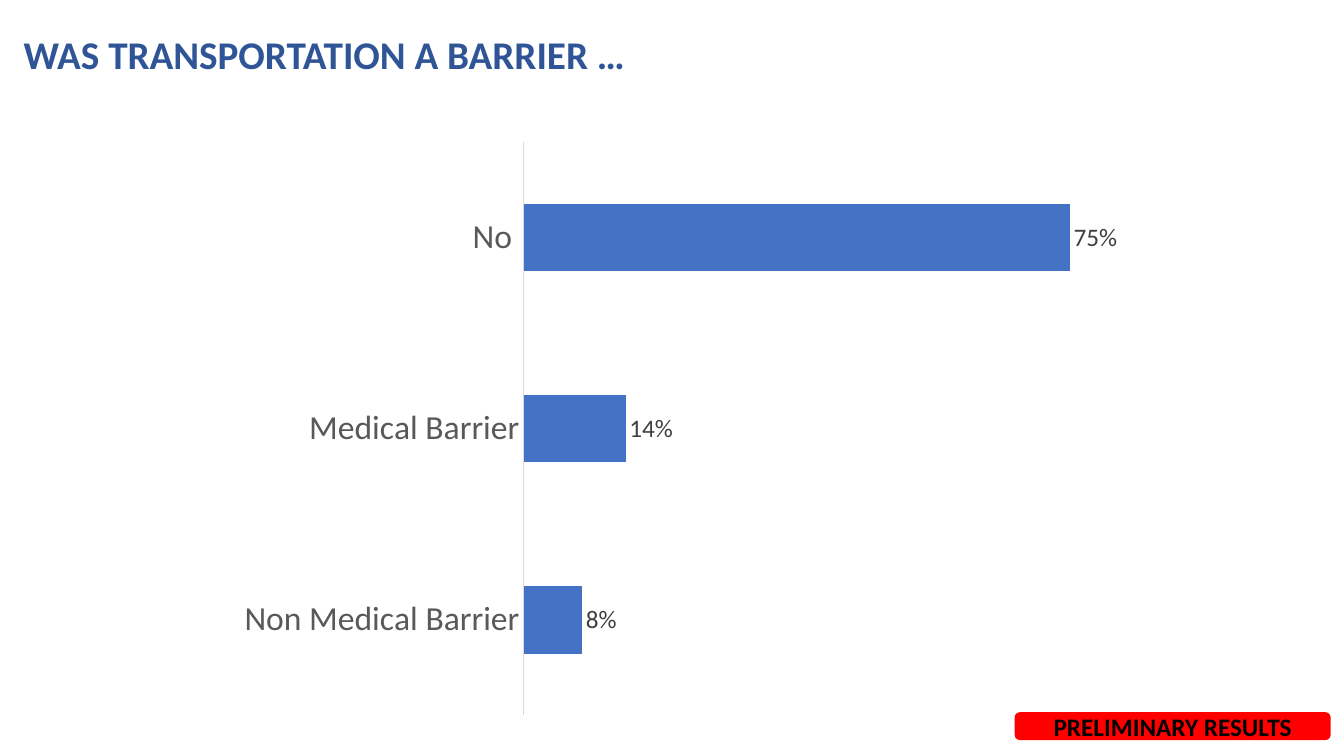
import pptx
import pptx.chart.data
import pptx.dml.color
import pptx.enum.chart
import pptx.enum.shapes
import pptx.enum.text
import pptx.oxml
import pptx.oxml.ns
import pptx.util
from dataclasses import dataclass


@dataclass(frozen=True)
class Theme:
    font: str = "Calibri"
    title: str = "2F5597"
    bar: str = "4472C4"
    axis_text: str = "595959"
    axis_line: str = "D9D9D9"
    label_text: str = "404040"
    badge: str = "FF0000"
    black: str = "000000"
    title_size: int = 28
    axis_size: int = 24
    body_size: int = 18
    small_size: int = 10


theme = Theme()


def color(value):
    return pptx.dml.color.RGBColor.from_string(value)


def format_text(target, text=None, *, size, fill, bold=False, align=None, anchor=None, wrap=True):
    """Format a chart element's font, or write and format a shape's text."""
    font = target.font if text is None else None
    if text is not None:
        frame = target.text_frame
        frame.text = text
        frame.word_wrap = wrap
        frame.auto_size = pptx.enum.text.MSO_AUTO_SIZE.NONE
        frame.vertical_anchor = anchor
        frame.paragraphs[0].alignment = align
        font = frame.paragraphs[0].runs[0].font
    font.name = theme.font
    font.size = pptx.util.Pt(size)
    font.bold = bold
    font.color.rgb = color(fill)


presentation = pptx.Presentation()
presentation.slide_width = pptx.util.Inches(13.33)
presentation.slide_height = pptx.util.Inches(7.5)
width, height = presentation.slide_width, presentation.slide_height
slide = presentation.slides.add_slide(presentation.slide_layouts.get_by_name("Title Only"))

# Bar chart
barrier_data = pptx.chart.data.CategoryChartData(number_format="0%")
barrier_data.categories = ["Non Medical Barrier", "Medical Barrier", "No "]
barrier_data.add_series("Series 1", [0.08, 0.14, 0.75])
chart = slide.shapes.add_chart(
    pptx.enum.chart.XL_CHART_TYPE.BAR_CLUSTERED,
    int(width * 0.1695), int(height * 0.172), int(width * 0.667), int(height * 0.79),
    barrier_data,
).chart
chart.has_legend = False
chart.has_title = False
format_text(chart, size=theme.small_size, fill=theme.black)

category_axis = chart.category_axis
category_axis.major_tick_mark = pptx.enum.chart.XL_TICK_MARK.NONE
category_axis.format.line.color.rgb = color(theme.axis_line)
category_axis.format.line.width = pptx.util.Pt(0.75)
format_text(category_axis.tick_labels, size=theme.axis_size, fill=theme.axis_text)

value_axis = chart.value_axis
value_axis.minimum_scale = 0
value_axis.maximum_scale = 0.8
value_axis.has_major_gridlines = False
value_axis.visible = False

plot = chart.plots[0]
plot.gap_width = 182
plot.vary_by_categories = False
fill = plot.series[0].format.fill
fill.solid()
fill.fore_color.rgb = color(theme.bar)
plot.has_data_labels = True
labels = plot.data_labels
labels.show_value = True
labels.number_format = "0%"
labels.number_format_is_linked = False
labels.position = pptx.enum.chart.XL_LABEL_POSITION.OUTSIDE_END
format_text(labels, size=theme.body_size, fill=theme.label_text)

# Fixed inner plot area, as shares of the chart's size
plot_area = plot._element.getparent()
for old_layout in plot_area.findall(pptx.oxml.ns.qn("c:layout")):
    plot_area.remove(old_layout)
shares = {"x": 0.33, "y": 0.02, "w": 0.65, "h": 0.96}
plot_area.insert(0, pptx.oxml.parse_xml(
    f'<c:layout {pptx.oxml.ns.nsdecls("c")}><c:manualLayout><c:layoutTarget val="inner"/>'
    '<c:xMode val="edge"/><c:yMode val="edge"/>'
    + "".join(f'<c:{name} val="{share}"/>' for name, share in shares.items())
    + "</c:manualLayout></c:layout>"
))

# Title
title = slide.shapes.title
title.left, title.top = int(width * 0.01), int(height * 0.033)
title.width, title.height = int(width * 0.468), int(height * 0.076)
format_text(
    title, "WAS TRANSPORTATION A BARRIER …", size=theme.title_size, fill=theme.title, bold=True,
    align=pptx.enum.text.PP_ALIGN.LEFT, anchor=pptx.enum.text.MSO_ANCHOR.TOP, wrap=False,
)

# Status badge
badge = slide.shapes.add_shape(
    pptx.enum.shapes.MSO_SHAPE.ROUNDED_RECTANGLE,
    int(width * 0.7555), int(height * 0.943), int(width * 0.234), int(height * 0.035),
)
badge.shadow.inherit = False
badge.fill.solid()
badge.fill.fore_color.rgb = color(theme.badge)
badge.line.color.rgb = color(theme.badge)
badge.line.width = pptx.util.Pt(1)
format_text(
    badge, "PRELIMINARY RESULTS", size=theme.body_size, fill=theme.black, bold=True,
    align=pptx.enum.text.PP_ALIGN.CENTER, anchor=pptx.enum.text.MSO_ANCHOR.MIDDLE,
)

presentation.save("out.pptx")
